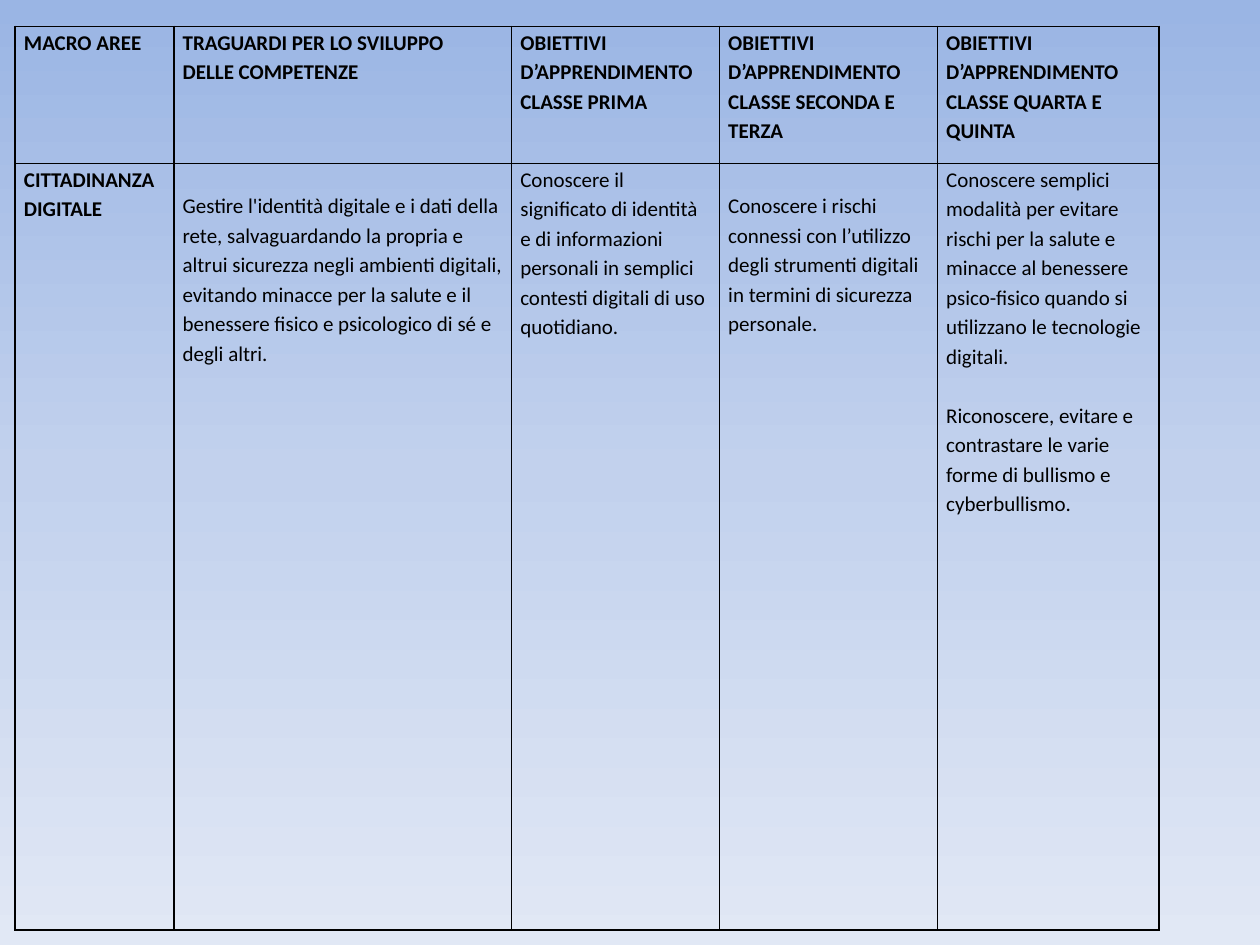
from copy import deepcopy

from lxml import etree
from pptx import Presentation
from pptx.dml.color import RGBColor
from pptx.enum import text as tx
from pptx.oxml.ns import qn
from pptx.util import Inches, Pt

SKY = [(0, "9AB5E4"), (0.5, "C2D1ED"), (1, "E1E8F5")]
INK = "000000"
COLUMN_WIDTHS = [1.26, 2.68, 1.65, 1.73, 1.76]
ROW_HEIGHTS = [1.09, 6.08]
HEADINGS = [
    ["MACRO AREE"],
    ["TRAGUARDI PER LO SVILUPPO", "DELLE COMPETENZE"],
    ["OBIETTIVI D’APPRENDIMENTO", "CLASSE PRIMA"],
    ["OBIETTIVI D’APPRENDIMENTO", "CLASSE SECONDA E TERZA"],
    ["OBIETTIVI D’APPRENDIMENTO", "CLASSE QUARTA E QUINTA"],
]
DIGITAL_CITIZENSHIP = [
    ["CITTADINANZA DIGITALE"],
    ["Gestire l'identità digitale e i dati della rete, salvaguardando la propria e "
     "altrui sicurezza negli ambienti digitali, evitando minacce per la salute e il "
     "benessere fisico e psicologico di sé e degli altri."],
    ["Conoscere il significato di identità e di informazioni personali in semplici "
     "contesti digitali di uso quotidiano."],
    ["Conoscere i rischi connessi con l’utilizzo degli strumenti digitali in termini "
     "di sicurezza personale."],
    ["Conoscere semplici modalità per evitare rischi per la salute e minacce al "
     "benessere psico-fisico quando si utilizzano le tecnologie digitali.",
     "Riconoscere, evitare e contrastare le varie forme di bullismo e cyberbullismo."],
]
LOWERED_COLUMNS = (1, 3)


def color(value):
    return RGBColor.from_string(value)


def write(frame, paragraphs, size=12, bold=False, gap=0):
    frame.word_wrap = True
    for index, wording in enumerate(paragraphs):
        paragraph = frame.add_paragraph() if index else frame.paragraphs[0]
        paragraph.alignment = tx.PP_ALIGN.LEFT
        paragraph.line_spacing = 1.15
        paragraph.space_before = Pt(gap if index else 0)
        run = paragraph.add_run()
        run.text = wording
        run.font.name = "Calibri"
        run.font.size = Pt(size)
        run.font.bold = bold
        run.font.color.rgb = color(INK)


def paint_background(slide):
    fill = slide.background.fill
    fill.gradient()
    fill.gradient_angle = 270
    stops = slide.element.find(".//" + qn("a:gsLst"))
    stops.insert(1, deepcopy(stops[0]))
    for stop, (position, shade) in zip(fill.gradient_stops, SKY):
        stop.position = position
        stop.color.rgb = color(shade)


def outline(cell, width=1):
    properties = cell._tc.get_or_add_tcPr()
    for index, side in enumerate(("a:lnL", "a:lnR", "a:lnT", "a:lnB")):
        line = etree.Element(qn(side), w=str(Pt(width)))
        solid = etree.SubElement(line, qn("a:solidFill"))
        etree.SubElement(solid, qn("a:srgbClr"), val=INK)
        properties.insert(index, line)


def add_curriculum(slide, left, top, width, height):
    rows = [HEADINGS, DIGITAL_CITIZENSHIP]
    curriculum = slide.shapes.add_table(
        len(rows), len(COLUMN_WIDTHS), Inches(left), Inches(top), Inches(width), Inches(height)
    ).table
    curriculum.first_row = False
    curriculum.horz_banding = False
    for column, share in zip(curriculum.columns, COLUMN_WIDTHS):
        column.width = Inches(share * width / sum(COLUMN_WIDTHS))
    for row, share in zip(curriculum.rows, ROW_HEIGHTS):
        row.height = Inches(share * height / sum(ROW_HEIGHTS))
    for r, entries in enumerate(rows):
        for c, paragraphs in enumerate(entries):
            cell = curriculum.cell(r, c)
            cell.fill.background()
            cell.margin_left = cell.margin_right = Inches(0.07)
            cell.margin_top = Inches(0.21 if r and c in LOWERED_COLUMNS else 0)
            cell.margin_bottom = 0
            cell.vertical_anchor = tx.MSO_ANCHOR.TOP
            outline(cell)
            write(cell.text_frame, paragraphs, bold=r == 0 or c == 0, gap=17 if r else 0)


def main():
    deck = Presentation()
    deck.slide_width = Inches(10)
    deck.slide_height = Inches(7.5)
    slide = deck.slides.add_slide(deck.slide_layouts[6])
    paint_background(slide)
    add_curriculum(slide, 0.12, 0.21, 9.08, 7.17)
    deck.save("out.pptx")


if __name__ == "__main__":
    main()
